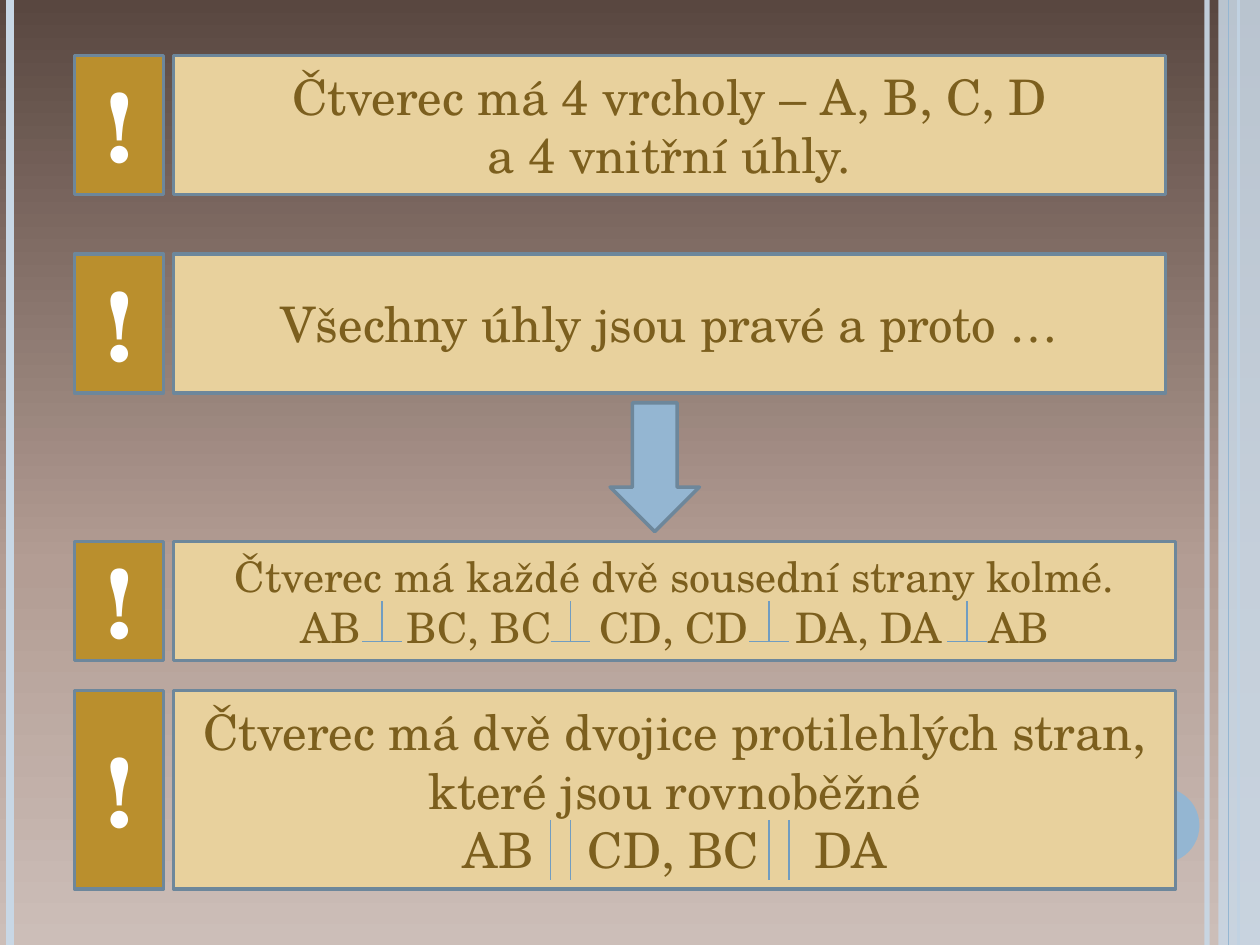
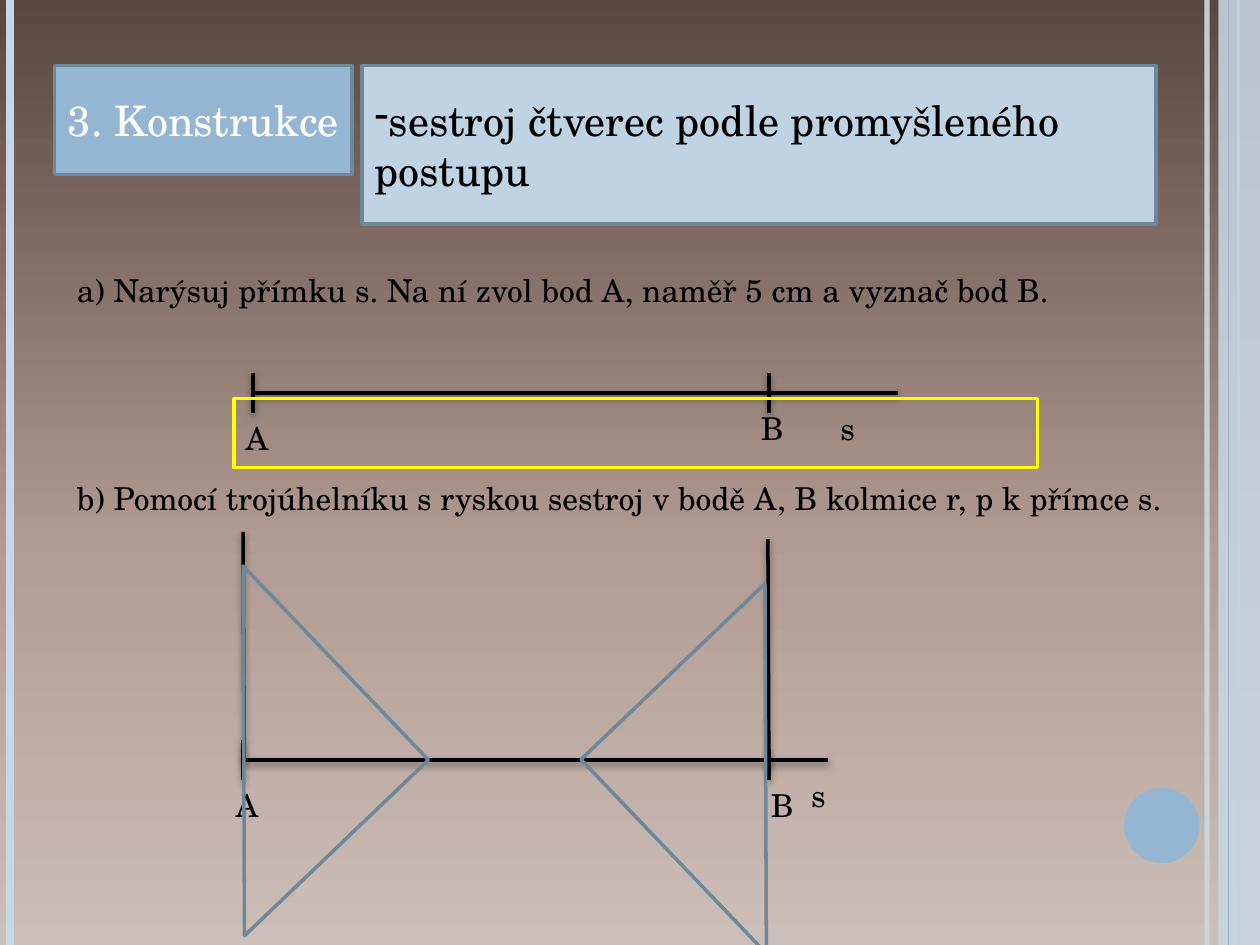
"""Build two geometry slides about the square: its properties and its construction."""
from lxml import etree
from pptx import Presentation
from pptx.dml.color import RGBColor
from pptx.enum import shapes, text
from pptx.oxml import parse_xml
from pptx.oxml.ns import nsdecls, qn
from pptx.util import Cm, Pt

FONT = "TeX Gyre Schola"
COLORS = {
    "bottom": "CCBEB8", "middle": "B39D94", "top": "594740",
    "blue": "94B6D2", "pale": "C8D7E5", "light": "BFD3E4",
    "edge": "6D879B", "mark": "719DC1", "gold": "BA8F2D",
    "sand": "E8D19D", "brown": "7C5F1E", "white": "FFFFFF",
    "black": "000000", "yellow": "FFFF00",
}
RECT = shapes.MSO_SHAPE.RECTANGLE
SHADOW = (
    f'<a:effectLst {nsdecls("a")}><a:outerShdw blurRad="50800" dist="25400" dir="5400000" rotWithShape="0">'
    '<a:srgbClr val="000000"><a:alpha val="40000"/></a:srgbClr></a:outerShdw></a:effectLst>'
)


def style(sp, fill=None, line="edge", paras=(), size=18, color="black", align=text.PP_ALIGN.CENTER):
    sp.shadow.inherit = False
    if fill:
        sp.fill.solid()
        sp.fill.fore_color.rgb = RGBColor.from_string(COLORS[fill])
    else:
        sp.fill.background()
    if line:
        sp.line.color.rgb = RGBColor.from_string(COLORS[line])
        sp.line.width = Pt(2)
    else:
        sp.line.fill.background()
    tf = sp.text_frame
    tf.word_wrap = True
    if paras:
        tf.text = "\n".join(paras)
    for p in tf.paragraphs:
        p.alignment = align
        p.space_before = Pt(0)
        for r in p.runs:
            r.font.name = FONT
            r.font.size = Pt(size)
            r.font.color.rgb = RGBColor.from_string(COLORS[color])
    return sp


def add_line(s, x1, y1, x2, y2, color="black", width=2, shadow=False):
    cx = s.shapes.add_connector(shapes.MSO_CONNECTOR.STRAIGHT, Cm(x1), Cm(y1), Cm(x2), Cm(y2))
    cx.line.color.rgb = RGBColor.from_string(COLORS[color])
    cx.line.width = Pt(width)
    effects = SHADOW if shadow else f'<a:effectLst {nsdecls("a")}/>'
    cx._element.spPr.append(parse_xml(effects))
    return cx


prs = Presentation()
prs.slide_width, prs.slide_height = Cm(25.4), Cm(19.05)
master = prs.slide_master

fill = master.background.fill
fill.gradient()
fill.gradient_angle = 90
stops = master._element.find(".//" + qn("a:gsLst"))
stops.clear()
for position, name in ((0, "bottom"), (40, "middle"), (100, "top")):
    gs = etree.SubElement(stops, qn("a:gs"), pos=str(position * 1000))
    etree.SubElement(gs, qn("a:srgbClr"), val=COLORS[name])

s = prs.slides.add_slide(prs.slide_layouts[6])
rail = add_line(s, 24.33, 0, 24.33, 19.05, "pale", 3)
left_rail = add_line(s, 0.2, 0, 0.2, 19.05, "pale", 4.5)
outer_rail = add_line(s, 24.97, 0, 24.97, 19.05, "blue", 1.5)
band = style(s.shapes.add_shape(RECT, Cm(24.56), 0, Cm(0.84), Cm(19.05)), "pale", None)
inner_rail = add_line(s, 24.77, 0, 24.77, 19.05, "blue", 0.75)
dot = s.shapes.add_shape(shapes.MSO_SHAPE.OVAL, Cm(22.66), Cm(15.88), Cm(1.52), Cm(1.52))
style(dot, "blue", None)
for sp, alpha in ((rail, 93), (band, 87)):
    etree.SubElement(sp._element.spPr.find(".//" + qn("a:srgbClr")), qn("a:alpha"), val=str(alpha * 1000))
for number, sp in enumerate((rail, left_rail, outer_rail, band, inner_rail, dot), 100):
    sp._element.xpath(".//p:cNvPr")[0].set("id", str(number))
    master.shapes._spTree.append(sp._element)

rules = [
    (1.12, 2.8, 20, 28, ["Čtverec má 4 vrcholy – A, B, C, D", "a 4 vnitřní úhly."], ()),
    (5.12, 2.8, 20, 28, ["Všechny úhly jsou pravé a proto …"], ()),
    (10.92, 2.4, 20.2, 24,
     ["Čtverec má každé dvě sousední strany kolmé.", "\tAB\tBC, BC\tCD, CD\tDA, DA\tAB"],
     (2.3, 4.45, 8.33, 12.28, 16.17)),
    (13.92, 4, 20.2, 28,
     ["Čtverec má dvě dvojice protilehlých stran, které jsou rovnoběžné", "\tAB\tCD, BC\tDA"],
     (5.58, 8.1, 12.68)),
]
for top, height, width, size, paras, tabs in rules:
    sign = s.shapes.add_shape(RECT, Cm(1.5), Cm(top), Cm(1.8), Cm(height))
    style(sign, "gold", paras=["!"], size=54, color="white")
    sign.text_frame.paragraphs[0].runs[0].font.bold = True
    sp = s.shapes.add_shape(RECT, Cm(3.5), Cm(top), Cm(width), Cm(height))
    style(sp, "sand", paras=paras, size=size, color="brown")
    if tabs:
        p = sp.text_frame.paragraphs[-1]
        p.alignment = text.PP_ALIGN.LEFT
        tab_list = etree.SubElement(p._p.get_or_add_pPr(), qn("a:tabLst"))
        for tab in tabs:
            etree.SubElement(tab_list, qn("a:tab"), pos=str(Cm(tab)), algn="l")

for x in (7.3, 11.1, 15.1, 19.1):
    add_line(s, x, 12.93, x + 0.8, 12.93, "mark", 1)
    add_line(s, x + 0.4, 12.12, x + 0.4, 12.93, "mark", 1)
for x in (11.1, 11.5, 15.5, 15.9):
    add_line(s, x, 16.54, x, 17.73, "mark", 1)
style(s.shapes.add_shape(shapes.MSO_SHAPE.DOWN_ARROW, Cm(12.3), Cm(8.12), Cm(1.8), Cm(2.6)), "blue")

s = prs.slides.add_slide(prs.slide_layouts[1])
title, body = s.placeholders
headings = [
    (title, 1.1, 6, 2.2, "3. Konstrukce", "blue", "white", text.PP_ALIGN.CENTER),
    (body, 7.3, 16, 3.2, "sestroj čtverec podle promyšleného postupu", "light", "black", text.PP_ALIGN.LEFT),
]
for sp, left, width, height, words, fill_name, color, align in headings:
    sp.left, sp.top, sp.width, sp.height = Cm(left), Cm(1.32), Cm(width), Cm(height)
    style(sp, fill_name, paras=[words], size=24, color=color, align=align)
    sp.text_frame.vertical_anchor = text.MSO_ANCHOR.MIDDLE
    sp.text_frame.auto_size = text.MSO_AUTO_SIZE.NONE
pPr = body.text_frame.paragraphs[0]._p.get_or_add_pPr()
pPr.set("marL", "0")
pPr.set("indent", "0")
etree.SubElement(pPr, qn("a:buFontTx"))
etree.SubElement(pPr, qn("a:buChar"), char="-")

labels = [
    (1.3, 5.33, 22.4, "a) Narýsuj přímku s. Na ní zvol bod A, naměř 5 cm a vyznač bod B."),
    (16.69, 8.13, 1.6, "s"), (4.7, 8.33, 0.97, "A"), (15.09, 8.13, 0.8, "B"),
    (1.3, 9.53, 22.8, "b) Pomocí trojúhelníku s ryskou sestroj v bodě A, B kolmice r, p k přímce s."),
    (4.5, 15.72, 0.97, "A"), (15.29, 15.72, 0.8, "B"), (16.1, 15.52, 1.2, "s"),
]
for left, top, width, words in labels:
    sp = s.shapes.add_textbox(Cm(left), Cm(top), Cm(width), Cm(1.02))
    style(sp, line=None, paras=[words], align=text.PP_ALIGN.LEFT)
    sp.text_frame.auto_size = text.MSO_AUTO_SIZE.SHAPE_TO_FIT_TEXT

segments = [
    (5.1, 7.92, 18.1, 7.92), (5.1, 7.52, 5.1, 8.32), (15.5, 7.52, 15.5, 8.32),
    (4.9, 15.32, 16.7, 15.32), (4.9, 14.92, 4.9, 15.72), (15.5, 15.1, 15.5, 15.72),
    (4.92, 15.34, 4.9, 10.72), (15.5, 15.46, 15.48, 10.87),
]
for ends in segments:
    add_line(s, *ends, shadow=True)
for left, top, angle in ((2.21, 12.57, 226.3), (12.73, 12.93, 46.3)):
    sp = s.shapes.add_shape(shapes.MSO_SHAPE.RIGHT_TRIANGLE, Cm(left), Cm(top), Cm(5.41), Cm(5.13))
    style(sp).rotation = angle
style(s.shapes.add_shape(RECT, Cm(4.72), Cm(8.03), Cm(16.2), Cm(1.4)), line="yellow")

prs.save("out.pptx")
